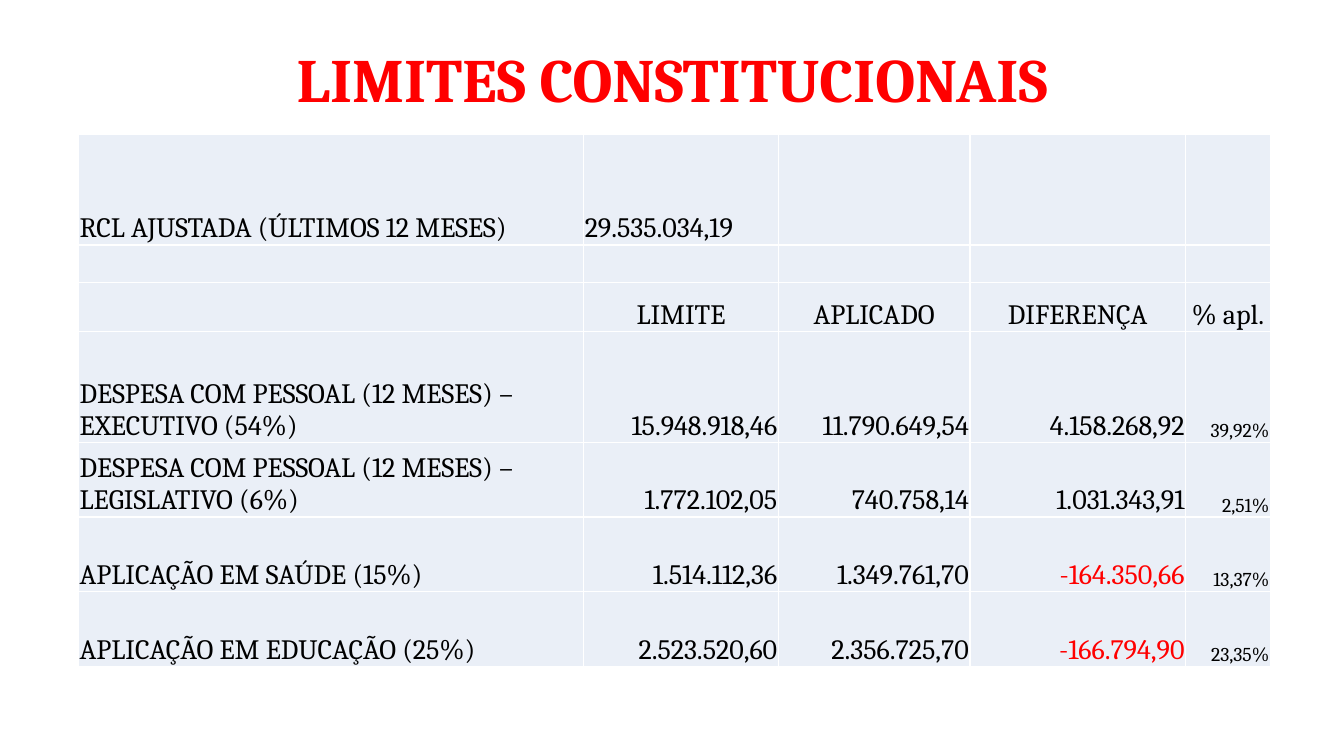
from dataclasses import dataclass

from lxml import etree
from pptx import Presentation
from pptx.dml.color import RGBColor
from pptx.enum.text import MSO_ANCHOR, PP_ALIGN
from pptx.oxml.ns import qn
from pptx.table import _Cell
from pptx.text.text import _Paragraph
from pptx.util import Inches, Pt

LEFT, CENTER, RIGHT = PP_ALIGN.LEFT, PP_ALIGN.CENTER, PP_ALIGN.RIGHT
MIDDLE, BOTTOM = MSO_ANCHOR.MIDDLE, MSO_ANCHOR.BOTTOM

RED = RGBColor(0xFF, 0x00, 0x00)
BLACK = RGBColor(0x00, 0x00, 0x00)
WHITE = RGBColor(0xFF, 0xFF, 0xFF)
PALE_BLUE = RGBColor(0xEA, 0xEF, 0xF7)

FONT = "Cambria"
TITLE_SIZE, TEXT_SIZE, PERCENT_SIZE = 44, 20, 14
COLUMN_WIDTHS = (5.01, 1.93, 1.9, 2.14, 0.84)
PERCENT_COLUMN = len(COLUMN_WIDTHS) - 1


@dataclass(frozen=True)
class TableRow:
    height: float
    texts: tuple[str, ...] = ()
    value_alignment: PP_ALIGN = RIGHT
    percent_size: int = PERCENT_SIZE


ROWS = (
    TableRow(1.1, ("RCL AJUSTADA (ÚLTIMOS 12 MESES)", "29.535.034,19"), LEFT),
    TableRow(0.37),
    TableRow(0.49, ("", " LIMITE ", "APLICADO", "DIFERENÇA", "% apl."), CENTER, TEXT_SIZE),
    TableRow(1.1, ("DESPESA COM PESSOAL (12 MESES) – EXECUTIVO (54%)",
                   "15.948.918,46", "11.790.649,54", "4.158.268,92", "39,92%")),
    TableRow(0.74, ("DESPESA COM PESSOAL (12 MESES) – LEGISLATIVO (6%)",
                    "1.772.102,05", "740.758,14", "1.031.343,91", "2,51%")),
    TableRow(0.74, ("APLICAÇÃO EM SAÚDE (15%)",
                    "1.514.112,36", "1.349.761,70", "-164.350,66", "13,37%")),
    TableRow(0.74, ("APLICAÇÃO EM EDUCAÇÃO (25%)",
                    "2.523.520,60", "2.356.725,70", "-166.794,90", "23,35%")),
)


def format_paragraph(paragraph: _Paragraph, alignment: PP_ALIGN, size: int,
                     color: RGBColor, bold: bool = False) -> None:
    paragraph.alignment = alignment
    for run in paragraph.runs:
        run.font.name = FONT
        run.font.size = Pt(size)
        run.font.bold = bold
        run.font.color.rgb = color


def add_borders(cell: _Cell) -> None:
    """Draw the four sides; they must precede the fill in the cell's XML."""
    properties = cell._tc.get_or_add_tcPr()
    for side in ("a:lnL", "a:lnR", "a:lnT", "a:lnB"):
        line = etree.SubElement(properties, qn(side), w=str(Pt(1)))
        fill = etree.SubElement(line, qn("a:solidFill"))
        etree.SubElement(fill, qn("a:srgbClr"), val=str(WHITE))


def format_cell(cell: _Cell) -> None:
    add_borders(cell)
    cell.fill.solid()
    cell.fill.fore_color.rgb = PALE_BLUE
    cell.vertical_anchor = BOTTOM
    cell.margin_left = cell.margin_right = cell.margin_top = Inches(0.01)
    cell.margin_bottom = 0


def add_title(slide) -> None:
    title = slide.shapes.title
    title.left, title.top = Inches(0.92), Inches(0.4)
    title.width, title.height = Inches(11.5), Inches(0.83)
    title.text_frame.text = "LIMITES CONSTITUCIONAIS"
    title.text_frame.vertical_anchor = MIDDLE
    paragraph = title.text_frame.paragraphs[0]
    paragraph.line_spacing = 0.9
    format_paragraph(paragraph, CENTER, TITLE_SIZE, RED, bold=True)


def add_limits_table(slide) -> None:
    table = slide.shapes.add_table(
        len(ROWS), len(COLUMN_WIDTHS), Inches(0.78), Inches(1.33),
        Inches(sum(COLUMN_WIDTHS)), Inches(sum(row.height for row in ROWS))).table
    table.first_row = table.horz_banding = False
    for column, width in zip(table.columns, COLUMN_WIDTHS):
        column.width = Inches(width)
    for row_index, row in enumerate(ROWS):
        table.rows[row_index].height = Inches(row.height)
        for cell in table.rows[row_index].cells:
            format_cell(cell)
        for column_index, text in enumerate(row.texts):
            cell = table.cell(row_index, column_index)
            cell.text_frame.text = text
            alignment = row.value_alignment if column_index else LEFT
            size = row.percent_size if column_index == PERCENT_COLUMN else TEXT_SIZE
            color = RED if text.startswith("-") else BLACK
            format_paragraph(cell.text_frame.paragraphs[0], alignment, size, color)


def main() -> None:
    presentation = Presentation()
    presentation.slide_width, presentation.slide_height = Inches(13.33), Inches(7.5)
    title_only_layout = presentation.slide_layouts[5]
    slide = presentation.slides.add_slide(title_only_layout)
    add_title(slide)
    add_limits_table(slide)
    presentation.save("out.pptx")


if __name__ == "__main__":
    main()
